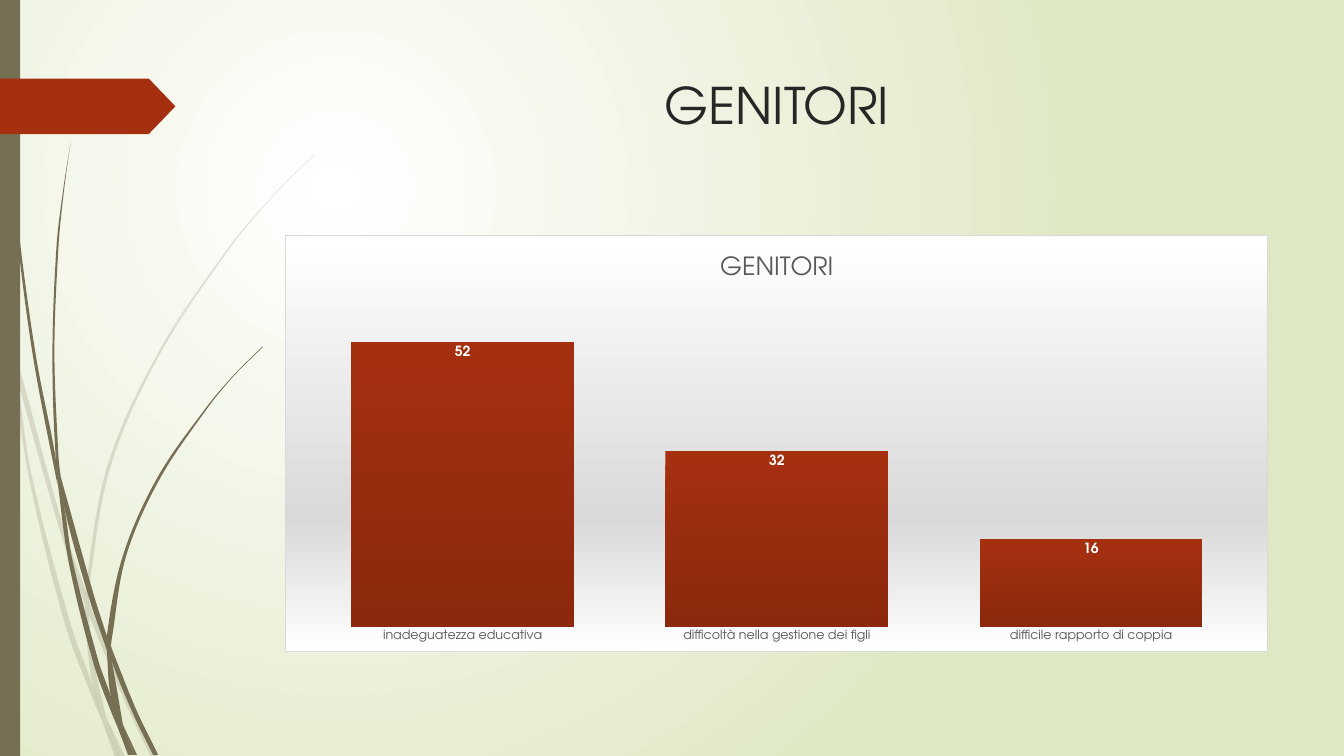
import math

from lxml import etree
from pptx import Presentation
from pptx import util as u
from pptx.chart.data import CategoryChartData
from pptx.dml.color import RGBColor
from pptx.enum import chart as ch, shapes, text
from pptx.oxml import parse_xml
from pptx.oxml.ns import nsdecls, qn

FONT = "TeX Gyre Adventor"
COLORS = {
    "white": "FFFFFF", "lime": "DFE8C4", "olive": "766F54", "rust": "A53010",
    "rust_dark": "8B280D", "ink": "262626", "grey": "595959", "silver": "D9D9D9",
}
# Pieces of grass: left edge and right edge, each from top to bottom, in inches
PALE_GRASS = [
    ([(0, 2.99), (0.1, 3.44), (0.11, 3.5)], [(0, 2.82), (0.09, 3.22), (0.11, 3.5)]),
    ([(0.17, 3.76), (0.58, 5.22), (0.84, 5.99)], [(0.14, 3.45), (0.62, 5.2), (0.85, 5.86)]),
    ([(0.88, 6.1), (1.23, 6.94), (1.5, 7.51)],
     [(0.88, 5.96), (0.92, 6.07), (1.27, 6.92), (1.55, 7.51)]),
    ([(1.05, 7.11), (1.19, 7.51)], [(1.05, 7.11), (1.24, 7.51)]),
    ([(0.11, 3.5), (0.28, 4.7), (0.65, 6.21), (0.92, 6.93), (1.01, 7.14)],
     [(0.11, 3.5), (0.17, 3.76), (0.31, 4.69), (0.7, 6.19), (0.93, 6.83), (1.01, 7.14)]),
    ([(0.84, 5.99), (0.87, 6.46), (0.93, 6.83), (1.05, 7.11)],
     [(0.84, 5.99), (0.88, 6.1), (0.91, 6.46), (1.05, 7.11)]),
    ([(3.12, 1.53), (2.89, 1.75), (2.68, 1.97), (2.28, 2.44), (1.58, 3.48), (1.07, 4.61),
      (0.85, 5.84), (0.88, 5.96)],
     [(3.12, 1.54), (2.9, 1.75), (2.68, 1.98), (2.29, 2.45), (1.6, 3.49), (1.1, 4.62),
      (0.88, 5.84), (0.88, 5.96)]),
    ([(1.01, 7.14), (1.14, 7.51)], [(1.01, 7.14), (1.19, 7.51)]),
    ([(0.85, 5.86), (0.84, 5.99), (0.88, 6.08)], [(0.85, 5.86), (0.88, 5.96), (0.88, 6.1)]),
    ([(0.93, 6.83), (0.99, 7.07), (1.01, 7.14), (1.19, 7.51)],
     [(0.93, 6.83), (0.96, 6.92), (1.05, 7.11), (1.19, 7.51)]),
]
DARK_GRASS = [
    ([(0.03, 0), (0.04, 0.48), (0.07, 1.1), (0.17, 2.33), (0.33, 3.55), (0.57, 4.81)],
     [(0.04, 0), (0.05, 0.48), (0.08, 1.09), (0.19, 2.32), (0.36, 3.55), (0.55, 4.53),
      (0.57, 4.81)]),
    ([(0.6, 4.72), (0.64, 5.05), (0.88, 5.92), (1.06, 6.45)],
     [(0.6, 4.72), (0.93, 5.9), (1.06, 6.31)]),
    ([(1.1, 6.41), (1.11, 6.56), (1.32, 7.08), (1.52, 7.49)],
     [(1.1, 6.41), (1.13, 6.49), (1.36, 7.06), (1.57, 7.49)]),
    ([(0.57, 4.77), (0.68, 5.57), (0.93, 6.59), (1.11, 7.08), (1.17, 7.22)],
     [(0.57, 4.77), (0.64, 5.05), (0.72, 5.56), (0.98, 6.57), (1.1, 6.91), (1.17, 7.22)]),
    ([(0.7, 1.41), (0.62, 1.93), (0.56, 2.45), (0.52, 3.49), (0.55, 4.49), (0.6, 4.72)],
     [(0.7, 1.41), (0.63, 1.93), (0.58, 2.45), (0.54, 3.49), (0.58, 4.53), (0.6, 4.72)]),
    ([(1.22, 7.19), (1.33, 7.49)], [(1.22, 7.19), (1.36, 7.49)]),
    ([(0.55, 4.49), (0.57, 4.77), (0.64, 5.05)], [(0.55, 4.49), (0.6, 4.72), (0.64, 5.05)]),
    ([(2.6, 3.44), (2.31, 3.73), (2.04, 4.05), (1.56, 4.74), (1.22, 5.51), (1.06, 6.31),
      (1.1, 6.41)],
     [(2.61, 3.44), (2.31, 3.74), (2.05, 4.06), (1.58, 4.76), (1.25, 5.52), (1.11, 6.33),
      (1.1, 6.41)]),
    ([(1.17, 7.22), (1.27, 7.49)], [(1.17, 7.22), (1.31, 7.49)]),
    ([(1.06, 6.45), (1.1, 6.91), (1.22, 7.19)],
     [(1.06, 6.45), (1.09, 6.51), (1.11, 6.56), (1.22, 7.19)]),
    ([(1.06, 6.31), (1.06, 6.45), (1.11, 6.56)], [(1.06, 6.31), (1.1, 6.41), (1.11, 6.56)]),
    ([(1.1, 6.91), (1.17, 7.22), (1.3, 7.49)], [(1.1, 6.91), (1.22, 7.19), (1.33, 7.49)]),
]
DOWNWARD = '<a:lin ang="5400000" scaled="0"/>'


def rgb(name):
    return RGBColor.from_string(COLORS[name])


def set_gradient(holder, stops, shade):
    """Swap the solid fill of holder for a gradient of (percent, colour) stops."""
    gs = "".join(f'<a:gs pos="{pos * 1000}"><a:srgbClr val="{COLORS[c]}"/></a:gs>'
                 for pos, c in stops)
    holder.replace(holder.find(qn("a:solidFill")), parse_xml(
        f'<a:gradFill {nsdecls("a")} rotWithShape="1"><a:gsLst>{gs}</a:gsLst>{shade}</a:gradFill>'))


def paint(sp, color, alpha=None):
    sp.shadow.inherit = False
    sp.fill.solid()
    sp.fill.fore_color.rgb = rgb(color)
    sp.line.fill.background()
    if alpha:
        clr = sp._element.spPr.find(".//" + qn("a:srgbClr"))
        etree.SubElement(clr, qn("a:alpha")).set("val", str(alpha * 1000))


def style_font(font, size, color, bold=False):
    font.name, font.size, font.bold = FONT, u.Pt(size), bold
    font.color.rgb = rgb(color)


def add_text(tf, words, size=18, color="ink", align=text.PP_ALIGN.CENTER):
    p = tf.paragraphs[0]
    p.alignment = align
    r = p.add_run()
    r.text = words
    style_font(r.font, size, color)


def curve_controls(edge):
    """Two Bezier control points for each step of a smooth edge."""
    slopes = []
    for i in range(len(edge)):
        (x0, y0), (x1, y1) = edge[max(i - 1, 0)], edge[min(i + 1, len(edge) - 1)]
        span = math.dist((x0, y0), (x1, y1))
        slopes.append(((x1 - x0) / span, (y1 - y0) / span))
    for a, b, m, n in zip(edge, edge[1:], slopes, slopes[1:]):
        d = math.dist(a, b) / 3
        yield (a[0] + m[0] * d, a[1] + m[1] * d), (b[0] - n[0] * d, b[1] - n[1] * d)


def add_grass(s, down, up, left, top, alpha=None):
    outline = [(u.Inches(left + x), u.Inches(top + y)) for x, y in down + up[::-1]]
    builder = s.shapes.build_freeform(*outline[0])
    builder.add_line_segments(outline[1:], close=True)
    sp = builder.convert_to_shape()
    paint(sp, "olive", alpha)
    # Bend both edges; the step that joins them stays straight
    turn = len(down)
    controls = [*curve_controls(outline[:turn]), None, *curve_controls(outline[turn:])]
    for line, pair in zip(sp._element.findall(".//" + qn("a:lnTo")), controls):
        if pair:
            line.tag = qn("a:cubicBezTo")
            for i, (x, y) in enumerate(pair):
                pt = etree.Element(qn("a:pt"), x=str(round(x - sp.left)), y=str(round(y - sp.top)))
                line.insert(i, pt)


def add_background(s):
    s.background.fill.solid()
    s.background.fill.fore_color.rgb = rgb("lime")
    set_gradient(s._element.find(".//" + qn("p:bgPr")), [(0, "white"), (100, "lime")],
                 '<a:path path="circle"><a:fillToRect l="50000" t="50000" '
                 'r="100000" b="100000"/></a:path>')


def add_decoration(s, left, top, height):
    for pieces, alpha in ((PALE_GRASS, 20), (DARK_GRASS, None)):
        for down, up in pieces:
            add_grass(s, down, up, left, top, alpha)
    # Side bar and arrow tag
    bar = s.shapes.add_shape(shapes.MSO_SHAPE.RECTANGLE, u.Inches(left), u.Inches(top),
                             u.Inches(0.2), u.Inches(height))
    paint(bar, "olive")
    tag = s.shapes.add_shape(shapes.MSO_SHAPE.PENTAGON, u.Inches(left), u.Inches(top + 0.78),
                             u.Inches(1.74), u.Inches(0.55))
    tag.adjustments[0] = 0.48
    paint(tag, "rust")


def add_title(s, left, top, width, height):
    tf = s.shapes.add_textbox(u.Inches(left), u.Inches(top), u.Inches(width),
                              u.Inches(height)).text_frame
    tf.word_wrap = True
    add_text(tf, "GENITORI", size=36)


def add_parents_chart(s, left, top, width, height):
    data = CategoryChartData()
    data.categories = ["inadeguatezza educativa", "difficoltà nella gestione dei figli",
                       "difficile rapporto di coppia"]
    data.add_series("Series 1", (52, 32, 16))
    chart = s.shapes.add_chart(ch.XL_CHART_TYPE.COLUMN_CLUSTERED, u.Inches(left), u.Inches(top),
                               u.Inches(width), u.Inches(height), data).chart
    style_font(chart.font, 10, "ink")
    chart.has_legend = False
    add_text(chart.chart_title.text_frame, "GENITORI", color="grey")
    chart.chart_title.include_in_layout = False
    # Axes
    cat, val = chart.category_axis, chart.value_axis
    cat.major_tick_mark = ch.XL_TICK_MARK.NONE
    cat.format.line.fill.background()
    style_font(cat.tick_labels.font, 9, "grey")
    val.has_major_gridlines = val.visible = False
    val.minimum_scale, val.maximum_scale = 0, 60
    # Columns and their labels
    plot = chart.plots[0]
    plot.gap_width, plot.vary_by_categories = 41, False
    series = plot.series[0]
    series.format.fill.solid()
    series.format.fill.fore_color.rgb = rgb("rust")
    set_gradient(series._element.find(qn("c:spPr")), [(0, "rust"), (100, "rust_dark")], DOWNWARD)
    labels = series.data_labels
    labels.show_value, labels.position = True, ch.XL_LABEL_POSITION.INSIDE_END
    style_font(labels.font, 10, "white", bold=True)
    # Plot area placement
    area = chart._chartSpace.find(".//" + qn("c:plotArea"))
    for old in area.findall(qn("c:layout")):
        area.remove(old)
    places = "".join(f'<c:{k} val="{v}"/>' for k, v in zip("xywh", (0.02, 0.15, 0.96, 0.79)))
    area.insert(0, parse_xml(
        f'<c:layout {nsdecls("c")}><c:manualLayout><c:layoutTarget val="inner"/>'
        f'<c:xMode val="edge"/><c:yMode val="edge"/>{places}</c:manualLayout></c:layout>'))
    # Chart frame
    frame = parse_xml(
        f'<c:spPr {nsdecls("c", "a")}><a:solidFill/><a:ln w="9525"><a:solidFill>'
        f'<a:srgbClr val="{COLORS["silver"]}"/></a:solidFill></a:ln></c:spPr>')
    chart._chartSpace.find(qn("c:chart")).addnext(frame)
    set_gradient(frame, [(0, "white"), (68, "silver"), (100, "white")], DOWNWARD)


def main():
    prs = Presentation()
    prs.slide_width, prs.slide_height = u.Inches(13.33), u.Inches(7.5)
    s = prs.slides.add_slide(prs.slide_layouts[6])
    add_background(s)
    add_decoration(s, 0, 0, 7.5)
    add_title(s, 2.83, 0.69, 9.75, 1.4)
    add_parents_chart(s, 2.83, 2.33, 9.75, 4.14)
    prs.save("out.pptx")


if __name__ == "__main__":
    main()
